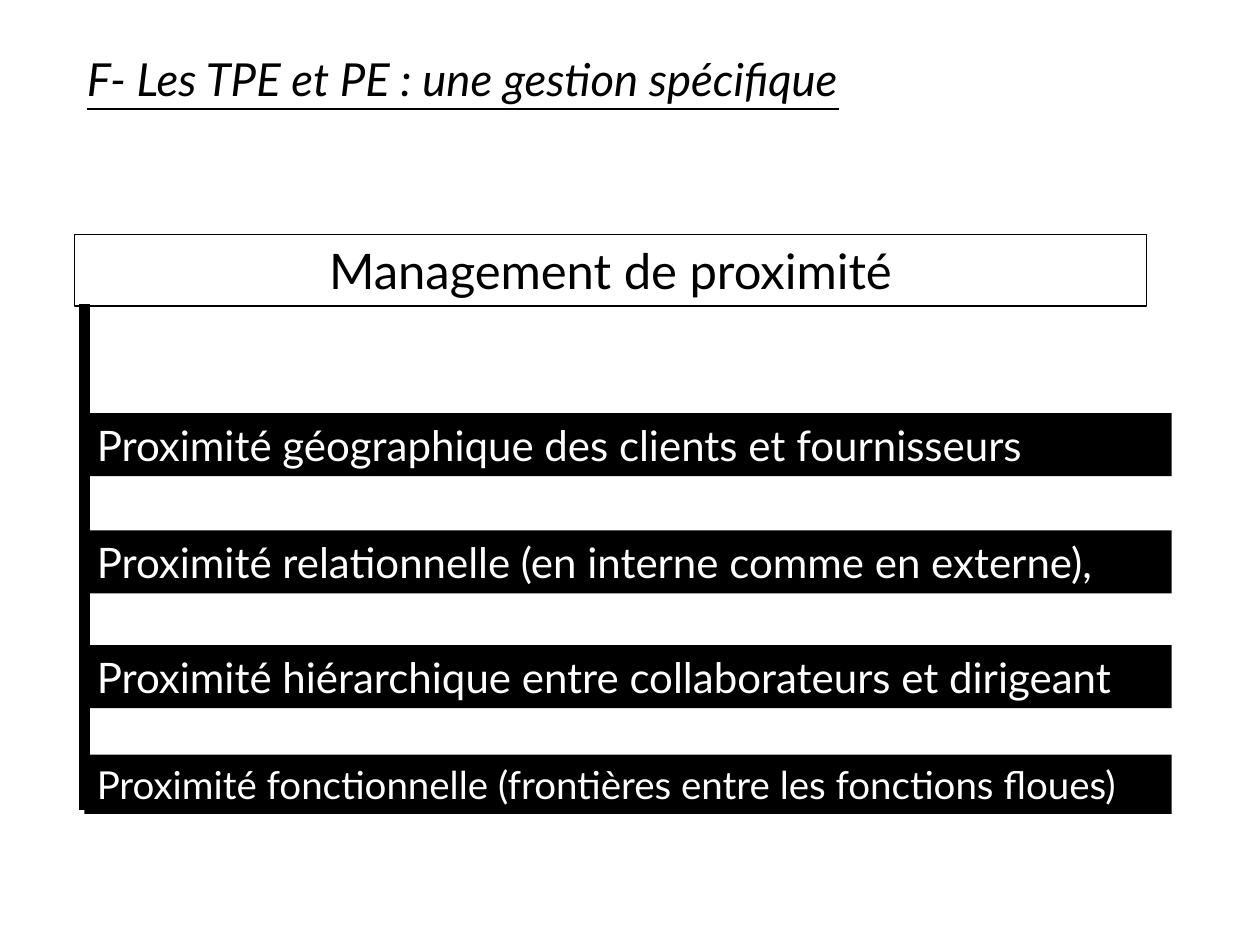
from lxml import etree
from pptx import Presentation
from pptx.dml.color import RGBColor
from pptx.enum.shapes import MSO_CONNECTOR, MSO_SHAPE
from pptx.enum.text import MSO_ANCHOR, MSO_AUTO_SIZE, PP_ALIGN
from pptx.oxml.ns import qn
from pptx.util import Inches, Pt

RECTANGLE = MSO_SHAPE.RECTANGLE
STRAIGHT = MSO_CONNECTOR.STRAIGHT
TOP = MSO_ANCHOR.TOP
FIT_SHAPE = MSO_AUTO_SIZE.SHAPE_TO_FIT_TEXT
LEFT, CENTER = PP_ALIGN.LEFT, PP_ALIGN.CENTER

FONT = "Lato"
COLORS = {"ink": "000000", "paper": "FFFFFF"}

TITLE = "F- Les TPE et PE : une gestion spécifique"
HEADING = "Management de proximité"
# text, top, height, font size
PROXIMITIES = [
    ("Proximité géographique des clients et fournisseurs", 3.28, 0.5, 24),
    ("Proximité relationnelle (en interne comme en externe),", 4.21, 0.5, 24),
    ("Proximité hiérarchique entre collaborateurs et dirigeant", 5.12, 0.5, 24),
    ("Proximité fonctionnelle (frontières entre les fonctions floues)", 5.99, 0.47, 22),
]
STEM_X, STEM_TOP, STEM_BOTTOM = 0.67, 2.41, 6.43
BAR_WIDTH = 8.63


def color(name):
    return RGBColor.from_string(COLORS[name])


def write(shape, text, size, ink, align=LEFT, wrap=True):
    frame = shape.text_frame
    frame.word_wrap = wrap
    frame.auto_size = FIT_SHAPE
    frame.vertical_anchor = TOP
    paragraph = frame.paragraphs[0]
    paragraph.alignment = align
    run = paragraph.add_run()
    run.text = text
    run.font.name = FONT
    run.font.size = Pt(size)
    run.font.color.rgb = color(ink)
    return run


def add_box(slide, box, fill, outline=None):
    shape = slide.shapes.add_shape(RECTANGLE, *map(Inches, box))
    shape.shadow.inherit = False
    shape.fill.solid()
    shape.fill.fore_color.rgb = color(fill)
    if outline:
        shape.line.color.rgb = color(outline)
        shape.line.width = Pt(0.75)
    else:
        shape.line.fill.background()
    return shape


def add_stem(slide):
    stem = slide.shapes.add_connector(
        STRAIGHT, *map(Inches, (STEM_X, STEM_TOP, STEM_X, STEM_BOTTOM)))
    stem.line.color.rgb = color("ink")
    stem.line.width = Pt(6)
    etree.SubElement(stem._element.spPr, qn("a:effectLst"))


def main():
    deck = Presentation()
    deck.slide_width, deck.slide_height = Inches(10), Inches(7.5)
    slide = deck.slides.add_slide(deck.slide_layouts[6])

    title = slide.shapes.add_textbox(*map(Inches, (0.59, 0.36, 6.71, 0.54)))
    title_run = write(title, TITLE, 26, "ink", wrap=False)
    title_run.font.italic = True
    title_run.font.underline = True

    heading = add_box(slide, (0.59, 1.86, 8.51, 0.57), "paper", "ink")
    write(heading, HEADING, 28, "ink", CENTER)

    for text, top, height, size in PROXIMITIES:
        bar = add_box(slide, (STEM_X, top, BAR_WIDTH, height), "ink")
        write(bar, text, size, "paper")

    add_stem(slide)
    deck.save("out.pptx")


if __name__ == "__main__":
    main()
